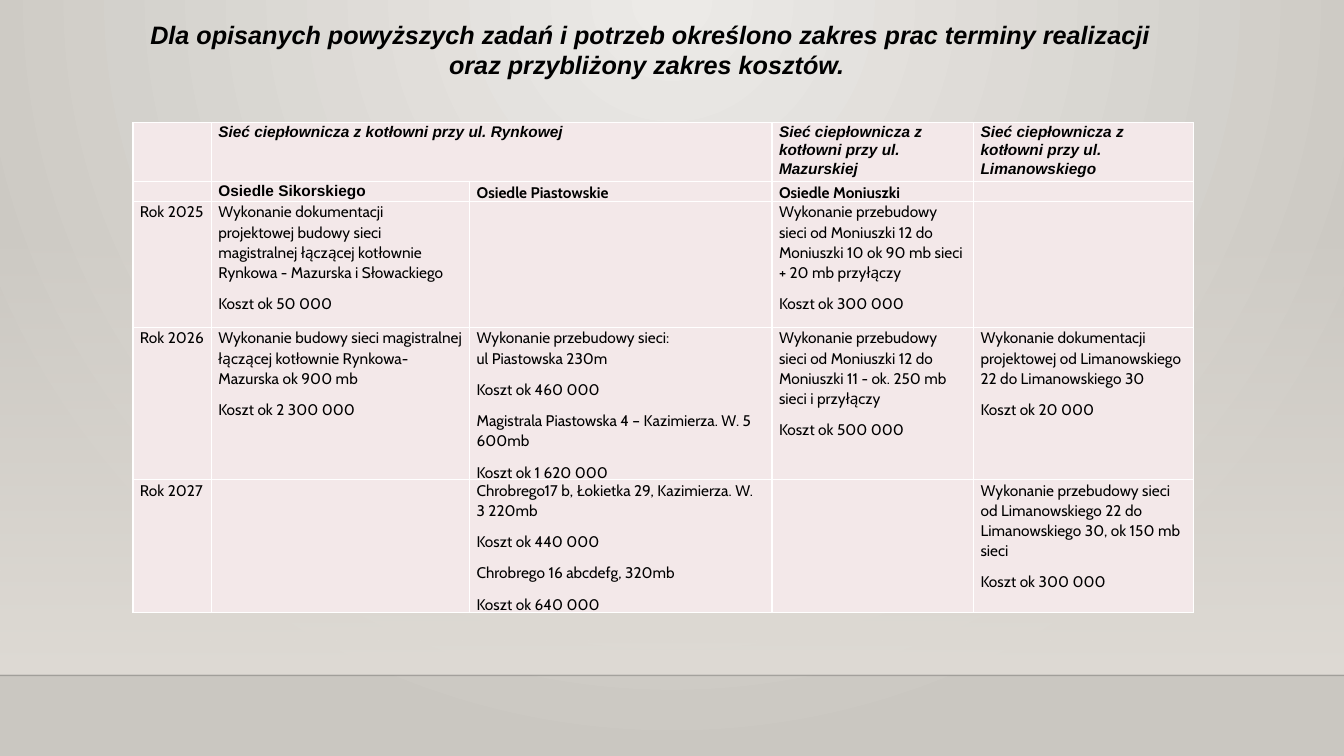
"""Builds the slide on heating network works, their dates and costs."""
from lxml import etree
from pptx import Presentation
from pptx.dml import color
from pptx.enum import shapes, text
from pptx.oxml import ns
from pptx.util import Pt


def hue(code):
    """Turns a hex string into a colour."""
    return color.RGBColor.from_string(code)


def add(node, tag, **attrs):
    """Appends a drawing element to a node."""
    return etree.SubElement(node, ns.qn("a:" + tag), attrs)


class Page:
    """Holds the style and the current slide."""

    ink, pale, white = "000000", "F3E8E9", "FFFFFF"
    size = 11

    def __init__(self, deck):
        self.slide = deck.slides.add_slide(deck.slide_layouts[6])

    def blend(self, fill, first, last):
        """Sets a two-stop gradient running downwards."""
        fill.gradient()
        fill.gradient_angle = 270
        for stop, code, place in zip(fill.gradient_stops, (first, last), (0, 1)):
            stop.color.rgb = hue(code)
            stop.position = place

    def back(self, first, last):
        """Paints a round gradient spreading from the top centre."""
        self.blend(self.slide.background.fill, first, last)
        grad = next(self.slide.element.iter(ns.qn("a:gradFill")))
        grad.remove(grad.find(ns.qn("a:lin")))
        ring = add(grad, "path", path="circle")
        add(ring, "fillToRect", l="43000", t="0", r="43000", b="100000")

    def veil(self, left, top, width, height, code):
        """Draws a rectangle that fades in downwards."""
        box = self.slide.shapes.add_shape(
            shapes.MSO_SHAPE.RECTANGLE, Pt(left), Pt(top), Pt(width), Pt(height))
        box.shadow.inherit = False
        box.line.fill.background()
        self.blend(box.fill, code, code)
        add(next(box.element.iter(ns.qn("a:srgbClr"))), "alpha", val="0")

    def rule(self, left, right, top):
        """Draws a faint level line."""
        line = self.slide.shapes.add_connector(
            shapes.MSO_CONNECTOR.STRAIGHT, Pt(left), Pt(top), Pt(right), Pt(top))
        line.line.width = Pt(1)
        line.line.color.rgb = hue(self.ink)
        add(next(line.element.iter(ns.qn("a:srgbClr"))), "alpha", val="20000")
        add(line.element.spPr, "effectLst")

    def style(self, run, size, face, bold, slant):
        """Formats one run."""
        font = run.font
        font.size, font.name = Pt(size), face
        font.bold, font.italic = bold, slant
        font.color.rgb = hue(self.ink)

    def title(self, left, top, width, height, words):
        """Writes the centred heading."""
        box = self.slide.shapes.add_textbox(Pt(left), Pt(top), Pt(width), Pt(height))
        frame = box.text_frame
        frame.word_wrap = True
        frame.auto_size = text.MSO_AUTO_SIZE.SHAPE_TO_FIT_TEXT
        frame.text = words
        for para in frame.paragraphs:
            para.alignment = text.PP_ALIGN.CENTER
            for run in para.runs:
                self.style(run, 18, "Arial", True, True)

    def cell(self, cell, words, face, bold, slant):
        """Fills and formats one table cell."""
        cell.margin_left = cell.margin_right = Pt(5)
        cell.margin_top = cell.margin_bottom = 0
        props = cell._tc.get_or_add_tcPr()
        for side in ("lnL", "lnR", "lnT", "lnB"):
            edge = add(add(props, side, w=str(Pt(1))), "solidFill")
            add(edge, "srgbClr", val=self.white)
        cell.fill.solid()
        cell.fill.fore_color.rgb = hue(self.pale)
        cell.text_frame.text = words
        points = str(self.size * 100)
        for para in cell.text_frame.paragraphs:
            para.line_spacing = 1.07
            para.space_after = Pt(8)
            for run in para.runs:
                self.style(run, self.size, face, bold, slant)
            for gap in para._p.findall(ns.qn("a:br")):
                add(gap, "rPr", sz=points)
            if not para.runs:
                add(para._p, "endParaRPr", sz=points)

    def table(self, left, top, cols, rows, data):
        """Draws the schedule with two heading rows."""
        grid = self.slide.shapes.add_table(
            len(rows), len(cols), Pt(left), Pt(top), Pt(sum(cols)), Pt(sum(rows))).table
        grid.first_row = grid.horz_banding = False
        for col, width in zip(grid.columns, cols):
            col.width = Pt(width)
        for row, height in zip(grid.rows, rows):
            row.height = Pt(height)
        for r, line in enumerate(data):
            for c, words in enumerate(line):
                face = "Arial" if r == 0 or (r, c) == (1, 1) else "Cabin"
                self.cell(grid.cell(r, c), words, face, r < 2, r == 0)
        grid.cell(0, 1).merge(grid.cell(0, 2))


PLAN = [
    ["", "Sieć ciepłownicza z kotłowni przy ul. Rynkowej", "",
     "Sieć ciepłownicza z kotłowni przy ul. Mazurskiej",
     "Sieć ciepłownicza z kotłowni przy ul. Limanowskiego"],
    ["", "Osiedle Sikorskiego", "Osiedle Piastowskie", "Osiedle Moniuszki", ""],
    ["Rok 2025",
     "Wykonanie dokumentacji projektowej budowy sieci magistralnej łączącej "
     "kotłownie Rynkowa - Mazurska i Słowackiego\nKoszt ok 50 000",
     "",
     "Wykonanie przebudowy sieci od Moniuszki 12 do Moniuszki 10 ok 90 mb sieci "
     "+ 20 mb przyłączy\nKoszt ok 300 000",
     ""],
    ["Rok 2026",
     "Wykonanie budowy sieci magistralnej łączącej kotłownie Rynkowa- Mazurska "
     "ok 900 mb\nKoszt ok 2 300 000",
     "Wykonanie przebudowy sieci:\vul Piastowska 230m\nKoszt ok 460 000\n"
     "Magistrala Piastowska 4 – Kazimierza. W. 5 600mb\nKoszt ok 1 620 000",
     "Wykonanie przebudowy sieci od Moniuszki 12 do Moniuszki 11 - ok. 250 mb "
     "sieci i przyłączy\nKoszt ok 500 000",
     "Wykonanie dokumentacji projektowej od Limanowskiego 22 do Limanowskiego 30\n"
     "Koszt ok 20 000"],
    ["Rok 2027",
     "",
     "Chrobrego17 b, Łokietka 29, Kazimierza. W. 3 220mb\nKoszt ok 440 000\n"
     "Chrobrego 16 abcdefg, 320mb\nKoszt ok 640 000",
     "",
     "Wykonanie przebudowy sieci od Limanowskiego 22 do Limanowskiego 30, "
     "ok 150 mb sieci\nKoszt ok 300 000"],
]


def main():
    """Builds and saves the slide."""
    deck = Presentation()
    deck.slide_width, deck.slide_height = Pt(960), Pt(540)
    page = Page(deck)
    page.back("ECEAE7", "CAC7C1")
    page.veil(0, 159, 960, 323, "DFDBD5")
    page.rule(0, 960, 482.4)
    page.title(16, 10, 897, 51,
               "Dla opisanych powyższych zadań i potrzeb określono zakres prac "
               "terminy realizacji\noraz przybliżony zakres kosztów. ")
    page.table(95, 87.5, [56, 184.5, 216, 144, 157], [41, 13.7, 90, 106, 92], PLAN)
    deck.save("out.pptx")


if __name__ == "__main__":
    main()
